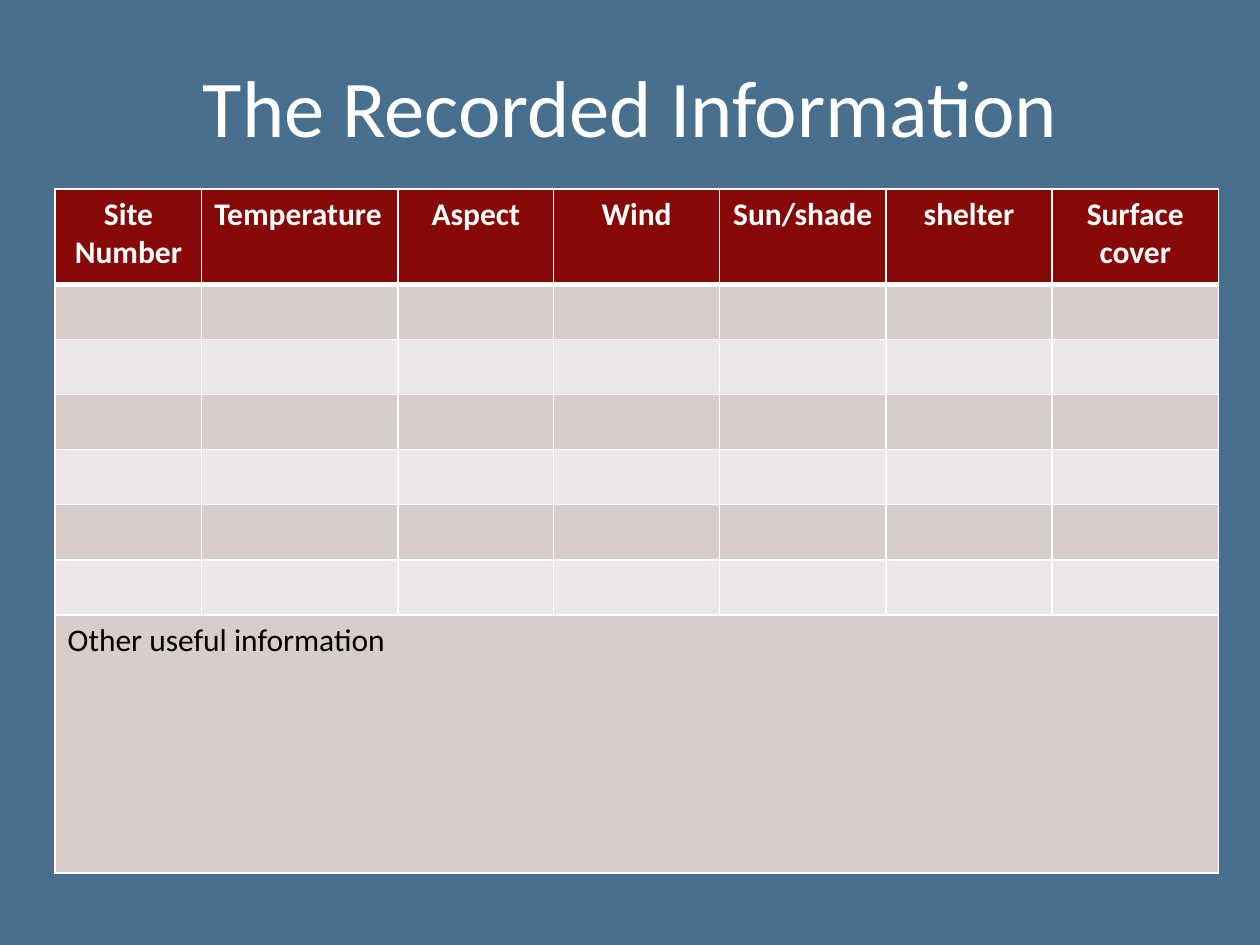
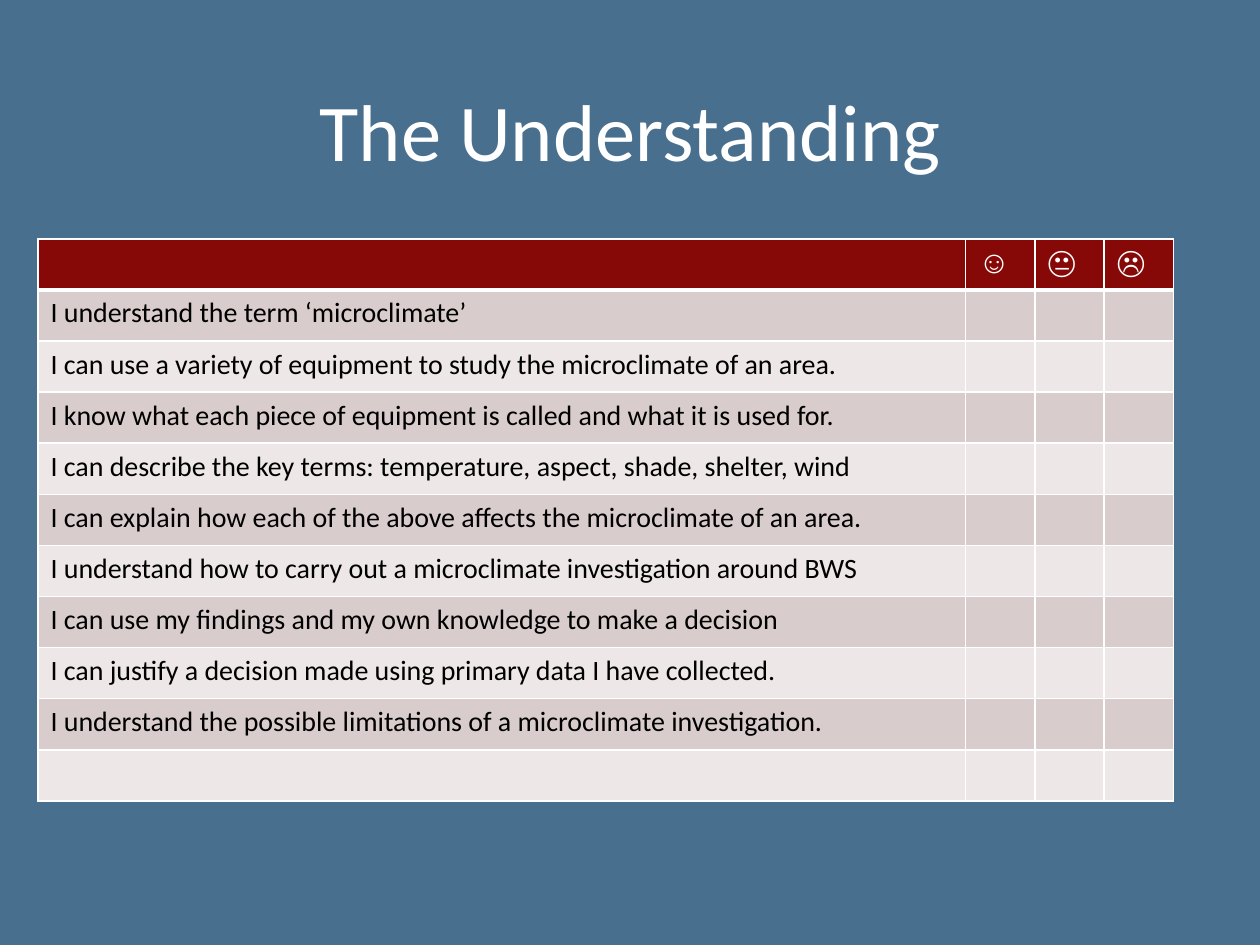
from dataclasses import dataclass

from lxml import etree
from pptx import Presentation
from pptx.dml.color import RGBColor
from pptx.enum.text import MSO_ANCHOR, PP_ALIGN
from pptx.oxml.ns import qn
from pptx.util import Pt

LEFT, CENTER = PP_ALIGN.LEFT, PP_ALIGN.CENTER
MIDDLE = MSO_ANCHOR.MIDDLE


@dataclass(frozen=True)
class Theme:
    background: str = "496F8E"
    header: str = "860908"
    bands: tuple = ("D9CCCC", "EDE7E7")
    white: str = "FFFFFF"
    black: str = "000000"
    font: str = "Calibri"
    face_font: str = "Times New Roman"
    title_size: float = 46
    table_size: float = 18
    statement_size: float = 16


THEME = Theme()


def write(frame, text, size, color, bold=False, align=LEFT, font=THEME.font):
    paragraph = frame.paragraphs[0]
    paragraph.alignment = align
    run = paragraph.add_run()
    run.text = text
    run.font.size = Pt(size)
    run.font.name = font
    run.font.bold = bold
    run.font.color.rgb = RGBColor.from_string(color)


def add_page(title, title_top, left, top, widths, heights):
    """Add a titled slide and return its empty table with header, bands and rules."""
    slide = deck.slides.add_slide(deck.slide_layouts[6])
    slide.background.fill.solid()
    slide.background.fill.fore_color.rgb = RGBColor.from_string(THEME.background)

    heading = slide.shapes.add_textbox(Pt(72), Pt(title_top), Pt(576), Pt(68.4)).text_frame
    heading.word_wrap = True
    heading.vertical_anchor = MIDDLE
    write(heading, title, THEME.title_size, THEME.white, align=CENTER)

    table = slide.shapes.add_table(len(heights), len(widths), Pt(left), Pt(top),
                                   Pt(sum(widths)), Pt(sum(heights))).table
    table.first_row = table.horz_banding = False
    for column, width in zip(table.columns, widths):
        column.width = Pt(width)
    for number, (row, height) in enumerate(zip(table.rows, heights)):
        row.height = Pt(height)
        fill = THEME.bands[(number - 1) % 2] if number else THEME.header
        rules = {"lnL": 1, "lnR": 1, "lnT": 3 if number == 1 else 1, "lnB": 1 if number else 3}
        for cell in row.cells:
            properties = cell._tc.get_or_add_tcPr()
            for side, weight in rules.items():
                line = etree.SubElement(properties, qn(f"a:{side}"), w=str(Pt(weight)))
                solid = etree.SubElement(line, qn("a:solidFill"))
                etree.SubElement(solid, qn("a:srgbClr"), val=THEME.white)
            cell.fill.solid()
            cell.fill.fore_color.rgb = RGBColor.from_string(fill)
    return table


deck = Presentation()
deck.slide_width, deck.slide_height = Pt(720), Pt(540)

# Recording sheet
measures = [("Site Number", 83.8, CENTER), ("Temperature", 112.2, LEFT), ("Aspect", 88.8, CENTER),
            ("Wind", 95, CENTER), ("Sun/shade", 95, CENTER), ("shelter", 95, CENTER),
            ("Surface cover", 95, CENTER)]
record = add_page("The Recorded Information", 26, 31.5, 108,
                  [width for _, width, _ in measures], [54.4] + [31.5] * 6 + [147.6])
for cell, (measure, _, align) in zip(record.rows[0].cells, measures):
    write(cell.text_frame, measure, THEME.table_size, THEME.white, True, align)
other_information = record.cell(7, 0)
other_information.merge(record.cell(7, len(measures) - 1))
write(other_information.text_frame, "Other useful information", THEME.table_size, THEME.black)

# Self-assessment
statements = [
    "I understand the term ‘microclimate’",
    "I can use a variety of equipment to study the microclimate of an area.",
    "I know what each piece of equipment is called and what it is used for.",
    "I can describe the key terms: temperature, aspect, shade, shelter, wind",
    "I can explain how each of the above affects the microclimate of an area.",
    "I understand how to carry out a microclimate investigation around BWS",
    "I can use my findings and my own knowledge to make a decision",
    "I can justify a decision made using primary data I have collected.",
    "I understand the possible limitations of a microclimate investigation.",
]
assessment = add_page("The Understanding", 39.6, 21.7, 136.5,
                      [530] + [39.6] * 3, [29.2] * (len(statements) + 2))
for column, face in enumerate("☺😐☹", start=1):
    write(assessment.cell(0, column).text_frame, face, THEME.table_size, THEME.white,
          True, font=THEME.face_font)
for row, statement in enumerate(statements, start=1):
    write(assessment.cell(row, 0).text_frame, statement, THEME.statement_size, THEME.black)

deck.save("out.pptx")
